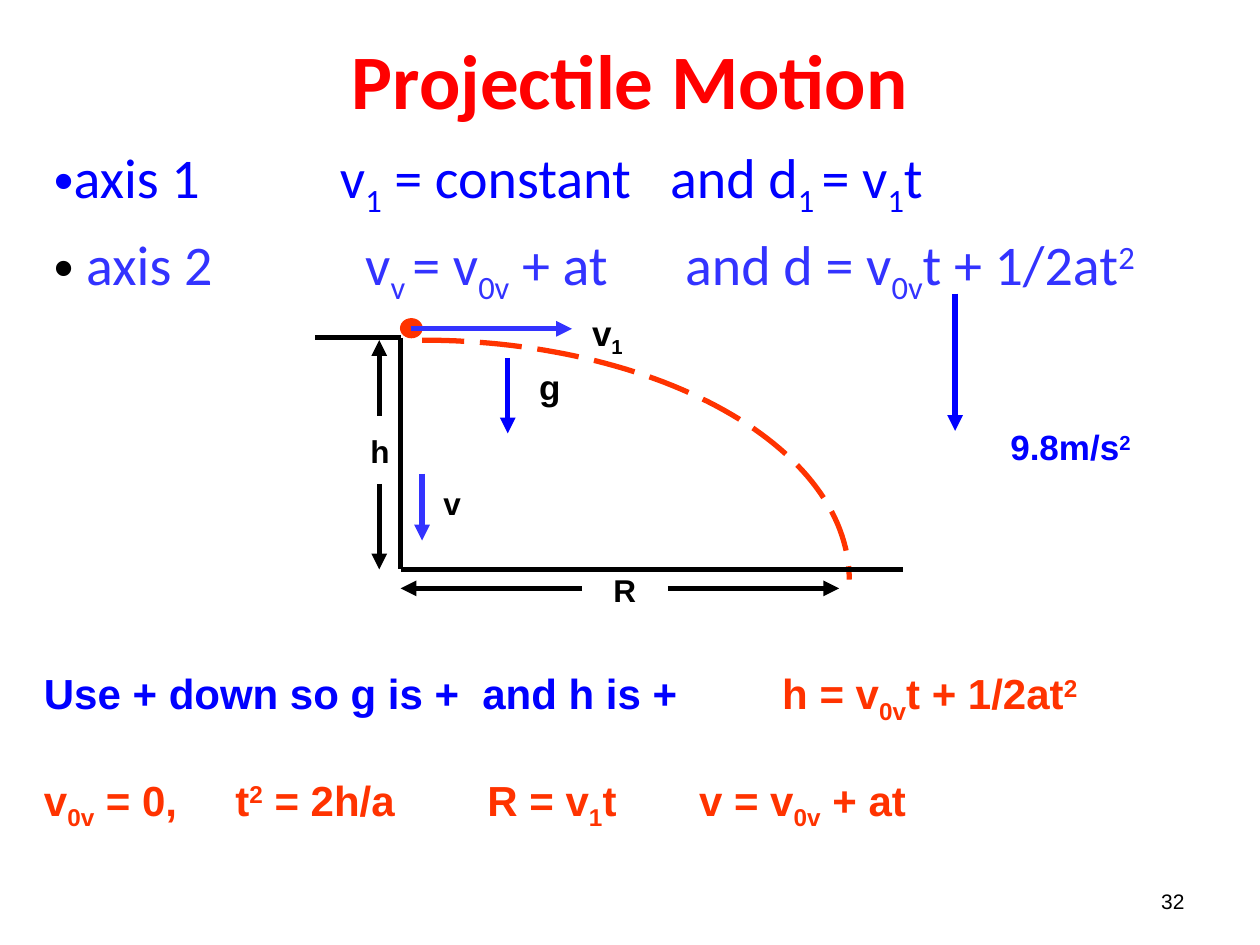
"""Build the projectile motion slide on a grid of 100 columns by 75 rows."""
import math
from dataclasses import dataclass
from typing import Optional

import lxml.etree
import pptx
import pptx.dml.color
import pptx.enum.dml
import pptx.enum.shapes
import pptx.enum.text
import pptx.oxml.ns
import pptx.util

COLS, ROWS = 100, 75
CELL = 0.1
BLACK, RED, BLUE, PALE, FLAME = "000000", "FF0000", "0000FF", "3333FF", "FF3300"
SHIFT = {"_": "-25000", "^": "30000"}


@dataclass
class Span:
    text: str
    hue: str


@dataclass
class Line:
    spans: list[Span]
    tabs: tuple[float, ...] = ()
    gap: float = 0
    dot: bool = False


@dataclass
class Note:
    box: tuple[float, float, float, float]
    lines: list[Line]
    size: float
    font: str = "Arial"
    bold: bool = True


@dataclass
class Stroke:
    start: tuple[float, float]
    end: tuple[float, float]
    hue: str = BLACK
    head: bool = True


def grid(count: float) -> int:
    return pptx.util.Inches(count * CELL)


def tint(code: str) -> pptx.dml.color.RGBColor:
    return pptx.dml.color.RGBColor.from_string(code)


def add(node, tag: str, **attrs: str):
    return lxml.etree.SubElement(node, pptx.oxml.ns.qn(tag), attrs)


def style(run, size: float, font: str, bold: bool, hue: str) -> None:
    run.font.size = pptx.util.Pt(size)
    run.font.name = font
    run.font.bold = bold
    run.font.color.rgb = tint(hue)


def fill_line(para, line: Line, note: Note) -> None:
    """Write a line whose | parts are lowered by _ or raised by ^."""
    para.space_before = pptx.util.Pt(line.gap)
    props = para._p.get_or_add_pPr()
    if line.dot:
        add(props, "a:buFont", typeface="Arial")
        add(props, "a:buChar", char="•")
    if line.tabs:
        stops = add(props, "a:tabLst")
        for col in line.tabs:
            add(stops, "a:tab", pos=str(grid(col)), algn="l")
    for span in line.spans:
        for part in span.text.split("|"):
            run = para.add_run()
            run.text = part.lstrip("_^")
            style(run, note.size, note.font, note.bold, span.hue)
            if part[0] in SHIFT:
                run.font._element.set("baseline", SHIFT[part[0]])


def draw_note(slide, note: Note):
    box = slide.shapes.add_textbox(*map(grid, note.box))
    frame = box.text_frame
    frame.word_wrap = True
    for rank, line in enumerate(note.lines):
        para = frame.add_paragraph() if rank else frame.paragraphs[0]
        fill_line(para, line, note)
    return box


def draw_stroke(slide, stroke: Stroke) -> None:
    link = slide.shapes.add_connector(
        pptx.enum.shapes.MSO_CONNECTOR.STRAIGHT,
        *map(grid, stroke.start + stroke.end))
    link.line.color.rgb = tint(stroke.hue)
    link.line.width = pptx.util.Pt(3)
    if stroke.head:
        add(link.line._get_or_add_ln(), "a:tailEnd", type="triangle")
    add(link._element.spPr, "a:effectLst")


def draw_curve(slide, left: float, top: float, wide: float, high: float) -> None:
    """Draw the dashed quarter ellipse of the flight."""
    steps = 60
    turns = [math.pi / 2 * step / steps for step in range(steps + 1)]
    spots = [(grid(left + wide * math.sin(turn)),
              grid(top + high * (1 - math.cos(turn)))) for turn in turns]
    pen = slide.shapes.build_freeform(*spots[0])
    pen.add_line_segments(spots[1:], close=False)
    curve = pen.convert_to_shape()
    curve.shadow.inherit = False
    curve.fill.background()
    curve.line.color.rgb = tint(FLAME)
    curve.line.width = pptx.util.Pt(3)
    curve.line.dash_style = pptx.enum.dml.MSO_LINE.LONG_DASH


def draw_ball(slide, *box: float) -> None:
    ball = slide.shapes.add_shape(
        pptx.enum.shapes.MSO_SHAPE.OVAL, *map(grid, box))
    ball.shadow.inherit = False
    ball.fill.solid()
    ball.fill.fore_color.rgb = tint(FLAME)
    ball.line.color.rgb = tint(FLAME)
    ball.line.width = pptx.util.Pt(0.75)


def draw_title(slide, text: str) -> None:
    title = slide.shapes.title
    title.left, title.top, title.width, title.height = map(grid, (5, 0, 90, 12.5))
    title.text_frame.text = text
    title.text_frame.vertical_anchor = pptx.enum.text.MSO_ANCHOR.MIDDLE
    para = title.text_frame.paragraphs[0]
    para.alignment = pptx.enum.text.PP_ALIGN.CENTER
    style(para.runs[0], 44, "Calibri", True, RED)


def label(text: str, left: float, top: float, wide: float,
          size: float = 18, hue: str = BLACK, high: Optional[float] = None) -> Note:
    return Note((left, top, wide, high or 4), [Line([Span(text, hue)])], size)


WALL, EDGE, FLOOR = 31.8, 26.8, 45.2
RISE, SPAN = 30.1, 46.7

RULES = Note((3.3, 10.8, 92, 17.5), [
    Line([Span("axis 1\tv|_1| = constant\tand d|_1 |= v|_1|t", BLUE)],
         (22.7, 48.9), 6.4, True),
    Line([Span(" ", BLACK),
          Span("axis 2\tv|_v |= v|_0v| + at\tand d = v|_0v|t + 1/2at|^2", PALE)],
         (24.7, 50.1), 6.4, True),
], 32, "Calibri", False)

SOLVE = Note((2.5, 52.5, 92.5, 15.7), [
    Line([Span("Use + down so g is +\tand h is +\t", BLUE),
          Span("h = v|_0v|t + 1/2at|^2", FLAME)], (34.8, 58.6)),
    Line([Span("v|_0v| = 0,\tt|^2| = 2h/a\tR = v|_1|t\tv = v|_0v| + at", FLAME)],
         (15.2, 35.2, 52), 28),
], 24)

LABELS = [
    label("9.8m/s|^2", 79.2, 33.3, 12, 20, BLUE, 4.3),
    label("v|_1", 46, 24.2, 6.1, 20, high=4.3),
    label("g", 41.8, 28.5, 3.7, 20, high=4.3),
    label("h", 28.4, 33.8, 3.5),
    label("v", 34.2, 37.9, 3.4),
    label("R", 47.7, 44.8, 3.8),
]

STROKES = [
    Stroke((75.8, 23.3), (75.8, 34.2), BLUE),
    Stroke((25, EDGE), (WALL, EDGE), head=False),
    Stroke((WALL, EDGE), (WALL, FLOOR), head=False),
    Stroke((WALL, FLOOR), (71.7, FLOOR), head=False),
    Stroke((32.6, 26.1), (45.4, 26.1), PALE),
    Stroke((40.3, 28.4), (40.3, 34.4), BLUE),
    Stroke((33.5, 37.6), (33.5, 42.9), PALE),
    Stroke((RISE, 38.4), (RISE, FLOOR)),
    Stroke((RISE, 33), (RISE, 27)),
    Stroke((46.2, SPAN), (WALL, SPAN)),
    Stroke((53, SPAN), (66.6, SPAN)),
]


def main() -> None:
    deck = pptx.Presentation()
    deck.slide_width, deck.slide_height = grid(COLS), grid(ROWS)
    slide = deck.slides.add_slide(deck.slide_layouts[5])
    draw_title(slide, "Projectile Motion")
    draw_curve(slide, 33.5, 27, 33.9, 19)
    draw_ball(slide, WALL, 25.3, 1.7, 1.5)
    for stroke in STROKES:
        draw_stroke(slide, stroke)
    for note in [RULES, *LABELS, SOLVE]:
        draw_note(slide, note)
    count = Note((71.7, 69.5, 23.3, 4), [Line([Span("32", BLACK)])], 12, bold=False)
    frame = draw_note(slide, count).text_frame
    frame.vertical_anchor = pptx.enum.text.MSO_ANCHOR.MIDDLE
    frame.paragraphs[0].alignment = pptx.enum.text.PP_ALIGN.RIGHT
    deck.save("out.pptx")


if __name__ == "__main__":
    main()
